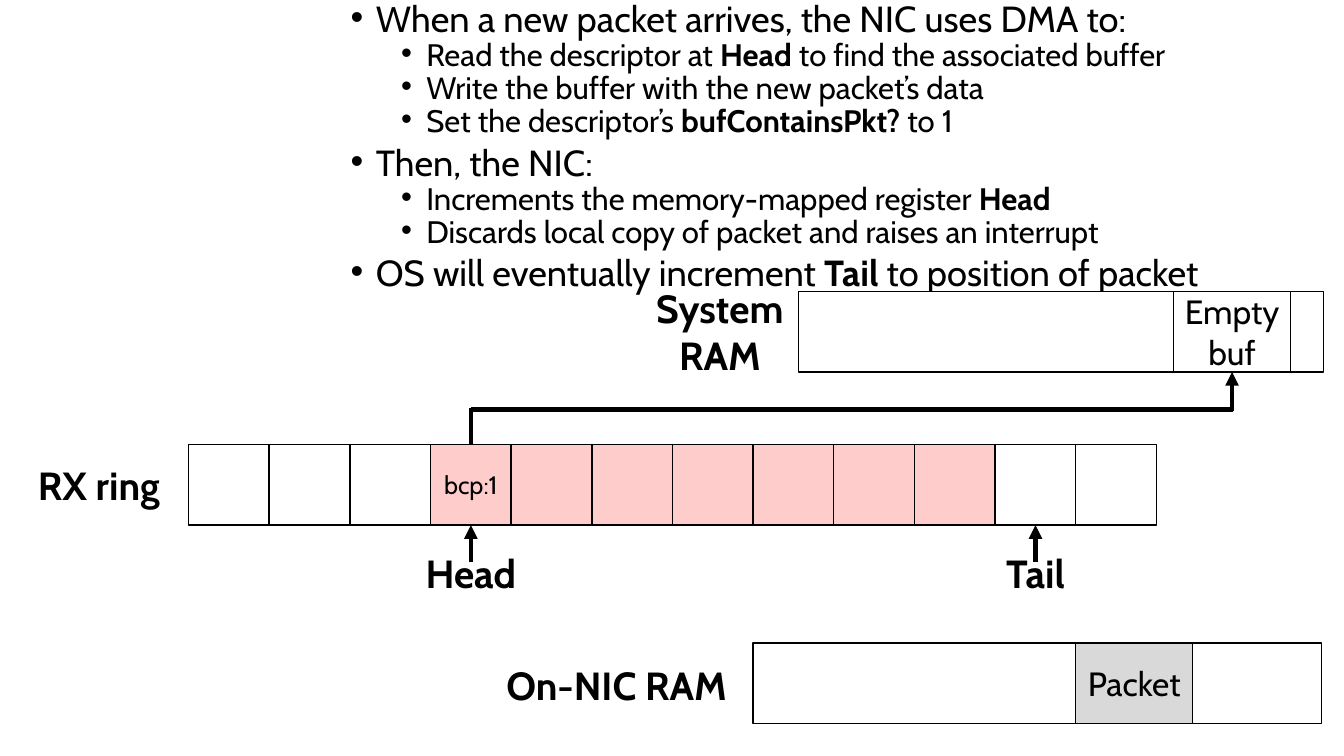
"""Builds the slide on how a NIC receives a packet through its RX ring."""
from lxml import etree
from pptx import Presentation
from pptx import util as u
from pptx.dml.color import RGBColor
from pptx.enum import shapes, text
from pptx.oxml.ns import qn

PX = 9144
FONT = "Cabin"
COLORS = {"black": "000000", "white": "FFFFFF", "pink": "FFCCCC", "grey": "D9D9D9"}

BULLETS = [
    (0, ["When a new packet arrives, the NIC uses DMA to:"]),
    (1, ["Read the descriptor at ", "Head", " to find the associated buffer"]),
    (1, ["Write the buffer with the new packet’s data"]),
    (1, ["Set the descriptor’s ", "bufContainsPkt?", " to 1"]),
    (0, ["Then, the NIC:"]),
    (1, ["Increments the memory-mapped register ", "Head"]),
    (1, ["Discards local copy of packet and raises an interrupt"]),
    (0, ["OS will eventually increment ", "Tail", " to position of packet"]),
]
LEVELS = [{"size": 25.9, "before": 10, "margin": 25}, {"size": 22.2, "before": 5, "margin": 75}]
BODY = (338, 3, 996, 309)

RING_LEFT, RING_TOP, CELL, CELLS = 187, 441, 80, 12
HEAD, TAIL = 3, 10
POINTERS = {"Head": HEAD, "Tail": TAIL}
POINTER_W, POINTER_GAP, ARROW = 134, 19, 37
BUS_Y = 406

LABELS = [
    ("RX ring", (10, 453, 176, 57)),
    ("On-NIC RAM", (477, 651, 269, 57)),
    ("System RAM", (626, 277, 176, 104)),
]
NIC_RAM = (747, 638, 564, 80)
PACKET = (1067, 638, 116, 80)
SYSTEM_RAM = (792, 289, 521, 80)
BUFFER = (1164, 289, 116, 80)


def rgb(name):
    return RGBColor.from_string(COLORS[name])


def emu(*lengths):
    return [u.Emu(n * PX) for n in lengths]


def style(font, size, bold=None):
    font.name, font.size, font.bold = FONT, u.Pt(size), bold
    font.color.rgb = rgb("black")


def add_box(s, at, fill="white", words="", size=24):
    sp = s.shapes.add_shape(shapes.MSO_SHAPE.RECTANGLE, *emu(*at))
    sp.shadow.inherit = False
    sp.fill.solid()
    sp.fill.fore_color.rgb = rgb(fill)
    sp.line.color.rgb = rgb("black")
    sp.line.width = u.Pt(1)
    if words:
        sp.text_frame.vertical_anchor = text.MSO_ANCHOR.MIDDLE
        p = sp.text_frame.paragraphs[0]
        p.text, p.alignment = words, text.PP_ALIGN.CENTER
        style(p.font, size)
    return sp


def add_label(s, words, at):
    tf = s.shapes.add_textbox(*emu(*at)).text_frame
    tf.word_wrap = True
    tf.auto_size = text.MSO_AUTO_SIZE.SHAPE_TO_FIT_TEXT
    p = tf.paragraphs[0]
    p.text, p.alignment = words, text.PP_ALIGN.CENTER
    style(p.font, 28, True)


def add_line(s, x1, y1, x2, y2, arrow=False):
    c = s.shapes.add_connector(shapes.MSO_CONNECTOR.STRAIGHT, *emu(x1, y1, x2, y2))
    c.line.color.rgb = rgb("black")
    c.line.width = u.Pt(3.25)
    if arrow:
        etree.SubElement(c.line._get_or_add_ln(), qn("a:tailEnd"), type="triangle")
    etree.SubElement(c._element.spPr, qn("a:effectLst"))
    return c


def add_bullets(s):
    tf = s.shapes.add_textbox(*emu(*BODY)).text_frame
    tf.word_wrap = True
    for i, (level, parts) in enumerate(BULLETS):
        look = LEVELS[level]
        p = tf.add_paragraph() if i else tf.paragraphs[0]
        p.level, p.line_spacing, p.space_before = level, 0.7, u.Pt(look["before"])
        style(p.font, look["size"])
        for j, part in enumerate(parts):
            r = p.add_run()
            r.text = part
            if j == 1:
                r.font.bold = True
        pPr = p._p.get_or_add_pPr()
        pPr.set("marL", str(look["margin"] * PX))
        pPr.set("indent", str(-25 * PX))
        bullet_font = etree.Element(qn("a:buFont"), typeface="Arial")
        bullet = etree.Element(qn("a:buChar"), char="•")
        defaults = pPr.find(qn("a:defRPr"))
        defaults.addprevious(bullet_font)
        defaults.addprevious(bullet)


def main():
    prs = Presentation()
    prs.slide_width, prs.slide_height = emu(1333, 750)
    s = prs.slides.add_slide(prs.slide_layouts[6])

    ring = [
        add_box(s, (RING_LEFT + i * CELL, RING_TOP, CELL, CELL),
                "pink" if HEAD <= i < TAIL else "white",
                "bcp:1" if i == HEAD else "", 18)
        for i in range(CELLS)
    ]
    ring_bottom = RING_TOP + CELL
    for words, i in POINTERS.items():
        x = RING_LEFT + i * CELL + CELL // 2
        add_label(s, words, (x - POINTER_W // 2, ring_bottom + POINTER_GAP, POINTER_W, 57))
        add_line(s, x, ring_bottom + ARROW, x, ring_bottom, True).end_connect(ring[i], 2)

    add_bullets(s)
    for words, at in LABELS:
        add_label(s, words, at)
    add_box(s, NIC_RAM)
    add_box(s, PACKET, "grey", "Packet")
    add_box(s, SYSTEM_RAM)
    buf = add_box(s, BUFFER, "white", "Empty buf")

    head_x = RING_LEFT + HEAD * CELL + CELL // 2
    buf_x = BUFFER[0] + BUFFER[2] // 2
    buf_bottom = BUFFER[1] + BUFFER[3]
    add_line(s, head_x, RING_TOP, head_x, BUS_Y - 1).begin_connect(ring[HEAD], 0)
    add_line(s, buf_x + 1, BUS_Y, head_x, BUS_Y)
    add_line(s, buf_x, BUS_Y + 2, buf_x, buf_bottom, True).end_connect(buf, 2)

    prs.save("out.pptx")


if __name__ == "__main__":
    main()
